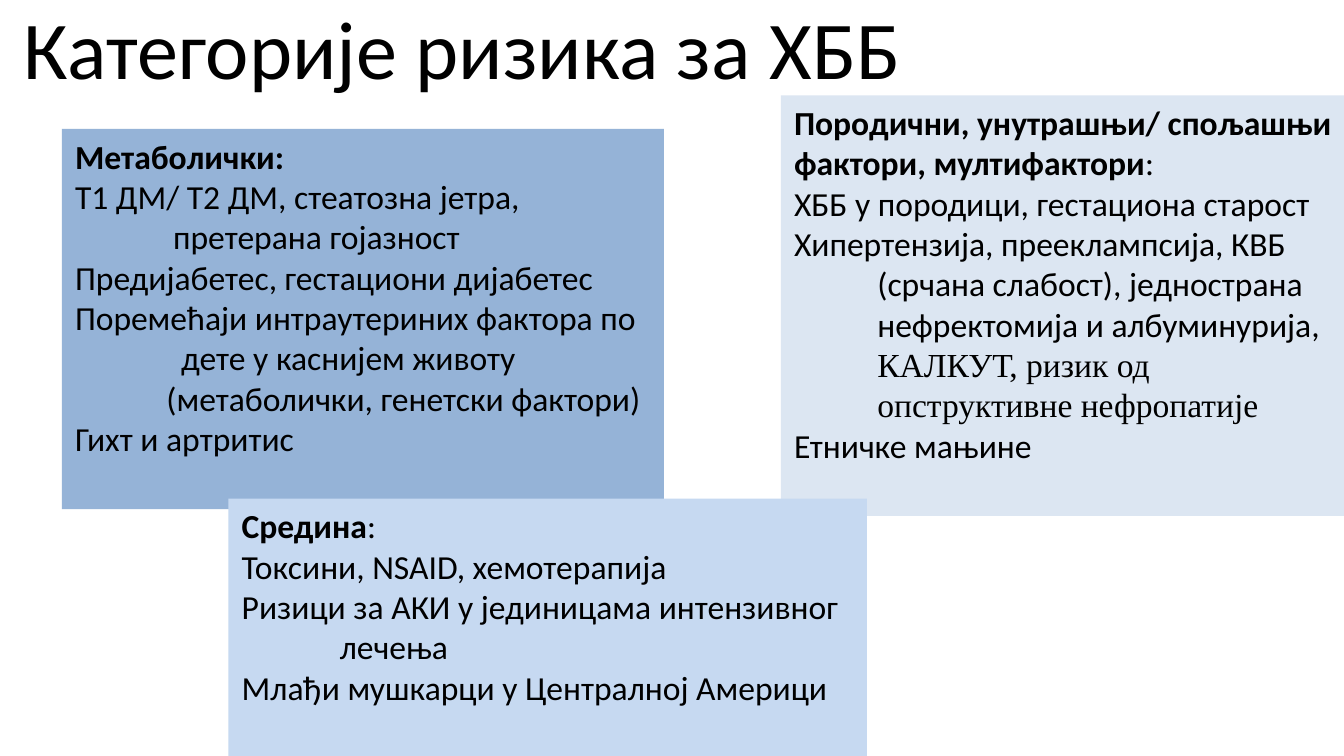
from dataclasses import dataclass

from pptx import Presentation
from pptx.dml.color import RGBColor
from pptx.enum import shapes, text
from pptx.util import Inches, Pt

SANS, SERIF = "Calibri", "Times New Roman"


@dataclass
class Line:
    words: str
    indent: float = 0
    font: str = SANS


@dataclass
class RiskBox:
    left: float
    top: float
    width: float
    height: float
    fill: str
    heading: str
    colon_bold: bool
    lines: list[Line]


BOXES = [
    RiskBox(0.46, 0.96, 4.48, 2.83, "95B3D7", "Метаболички", True, [
        Line("T1 ДМ/ Т2 ДМ, стеатозна јетра,"),
        Line("претерана гојазност", 0.73),
        Line("Предијабетес, гестациони дијабетес"),
        Line("Поремећаји интраутериних фактора по"),
        Line("дете у каснијем животу", 0.79),
        Line("(метаболички, генетски фактори)", 0.68),
        Line("Гихт и артритис"),
    ]),
    RiskBox(5.81, 0.71, 4.26, 3.13, "DCE6F2",
            "Породични, унутрашњи/ спољашњи фактори, мултифактори", False, [
        Line("ХББ у породици, гестациона старост"),
        Line("Хипертензија, прееклампсија, КВБ"),
        Line("(срчана слабост), једнострана", 0.62),
        Line("нефректомија и албуминурија,", 0.62),
        Line("КАЛКУТ, ризик од", 0.62, SERIF),
        Line("опструктивне нефропатије", 0.62, SERIF),
        Line("Етничке мањине"),
    ]),
    RiskBox(1.7, 3.71, 4.75, 1.92, "C6D9F1", "Средина", False, [
        Line("Токсини, NSAID, хемотерапија"),
        Line("Ризици за АКИ у јединицама интензивног"),
        Line("лечења", 0.73),
        Line("Млађи мушкарци у Централној Америци"),
    ]),
]


def rgb(value: str) -> RGBColor:
    return RGBColor.from_string(value)


def add_run(p, words: str, size: float = 18, name: str = SANS, bold: bool = False) -> None:
    r = p.add_run()
    r.text = words
    for key, value in {"size": Pt(size), "name": name, "bold": bold}.items():
        setattr(r.font, key, value)
    r.font.color.rgb = rgb("000000")


def add_title(s, words: str) -> None:
    sp = s.shapes.title
    place = {"left": -1.06, "top": -0.12, "width": 9, "height": 0.94}
    for key, value in place.items():
        setattr(sp, key, Inches(value))
    tf = sp.text_frame
    tf.vertical_anchor = text.MSO_ANCHOR.MIDDLE
    p = tf.paragraphs[0]
    p.alignment = text.PP_ALIGN.CENTER
    add_run(p, words, size=44)


def add_risk_box(s, box: RiskBox) -> None:
    sp = s.shapes.add_shape(
        shapes.MSO_SHAPE.RECTANGLE,
        *map(Inches, (box.left, box.top, box.width, box.height)))
    sp.shadow.inherit = False
    sp.fill.solid()
    sp.fill.fore_color.rgb = rgb(box.fill)
    sp.line.fill.background()
    tf = sp.text_frame
    tf.word_wrap = True
    tf.vertical_anchor = text.MSO_ANCHOR.TOP

    p = tf.paragraphs[0]
    p.alignment = text.PP_ALIGN.LEFT
    add_run(p, box.heading, bold=True)
    add_run(p, ":", bold=box.colon_bold)
    for line in box.lines:
        p = tf.add_paragraph()
        p.alignment = text.PP_ALIGN.LEFT
        if line.indent:
            pPr = p._p.get_or_add_pPr()
            pPr.set("marL", str(Inches(line.indent)))
            pPr.set("indent", "0")
        add_run(p, line.words, name=line.font)


def main() -> None:
    prs = Presentation()
    prs.slide_width = Inches(10)
    prs.slide_height = prs.slide_width * 9 // 16
    s = prs.slides.add_slide(prs.slide_layouts[5])
    add_title(s, "Категорије ризика за ХББ")
    for box in BOXES:
        add_risk_box(s, box)
    prs.save("out.pptx")


if __name__ == "__main__":
    main()
